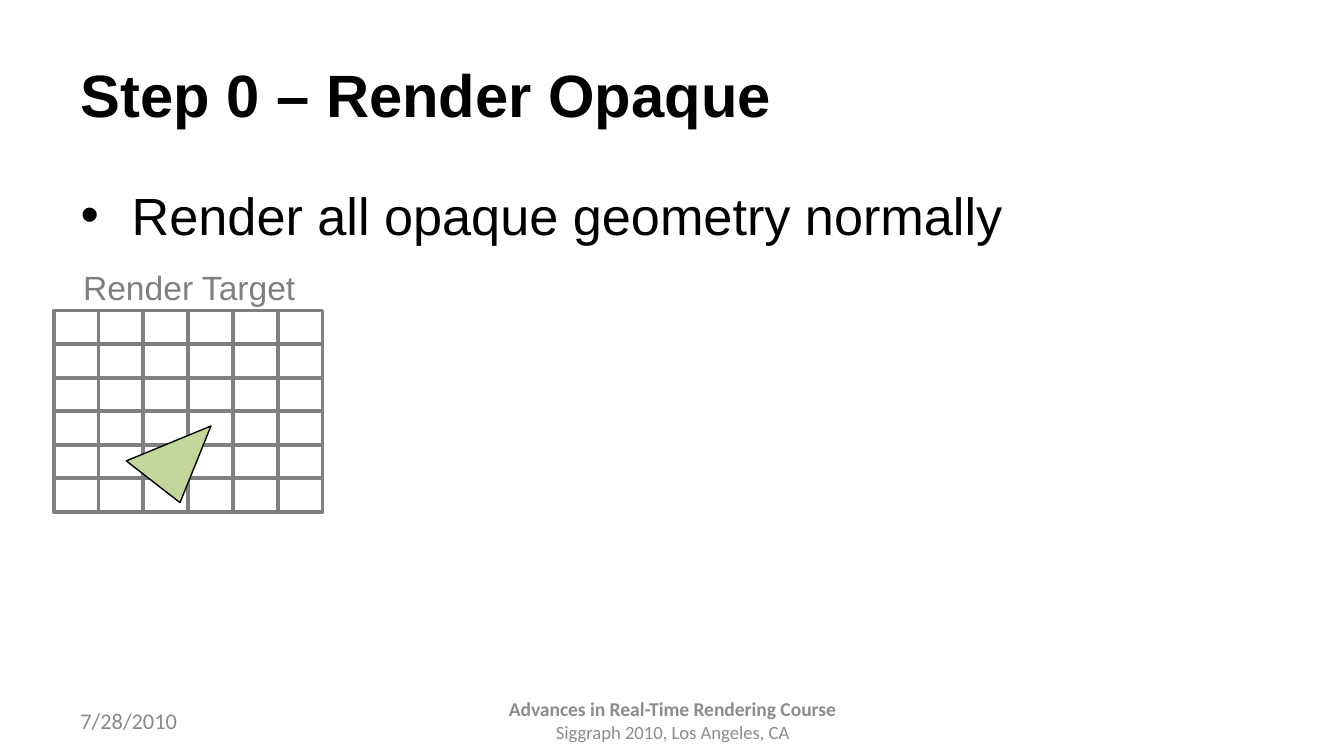
import pptx
import pptx.dml.color
import pptx.enum.shapes
import pptx.enum.text
import pptx.oxml
import pptx.oxml.ns
import pptx.util

Inches = pptx.util.Inches
Pt = pptx.util.Pt
ALIGN = pptx.enum.text.PP_ALIGN
ANCHOR = pptx.enum.text.MSO_ANCHOR

COLORS = {
    "text": "000000",
    "grid": "808080",
    "cell": "FFFFFF",
    "triangle": "C3D69B",
    "date": "898989",
    "footer": "8C8C8C",
}


class SlideBuilder:
    def __init__(self, slide):
        self.slide = slide

    def color(self, name):
        return pptx.dml.color.RGBColor.from_string(COLORS[name])

    def place(self, shape, left, top, width, height):
        shape.left, shape.top = Inches(left), Inches(top)
        shape.width, shape.height = Inches(width), Inches(height)

    def style_para(self, para, text, size, color, font="Arial", bold=False, align=ALIGN.LEFT):
        para.text = text
        para.alignment = align
        para.space_before = Pt(0)
        para.font.size = Pt(size)
        para.font.name = font
        para.font.bold = bold
        para.font.color.rgb = self.color(color)

    def title(self, text, *bounds):
        title = self.slide.shapes.title
        self.place(title, *bounds)
        title.text_frame.vertical_anchor = ANCHOR.MIDDLE
        self.style_para(title.text_frame.paragraphs[0], text, 32, "text", bold=True)

    def bullet(self, text, *bounds):
        body = self.slide.placeholders[1]
        self.place(body, *bounds)
        para = body.text_frame.paragraphs[0]
        props = para._p.get_or_add_pPr()
        props.set("marL", str(Inches(0.38)))
        props.set("indent", str(-Inches(0.38)))
        mark = pptx.oxml.parse_xml(f'<a:buChar {pptx.oxml.ns.nsdecls("a")} char="•"/>')
        props.append(mark)
        self.style_para(para, text, 28, "text")

    def text_box(self, bounds, lines, wrap=True, anchor=ANCHOR.MIDDLE):
        box = self.slide.shapes.add_textbox(*map(Inches, bounds))
        frame = box.text_frame
        frame.word_wrap = wrap
        frame.vertical_anchor = anchor
        for index, line in enumerate(lines):
            para = frame.add_paragraph() if index else frame.paragraphs[0]
            self.style_para(para, **line)

    def finish(self, shape, fill, line, weight):
        shape.shadow.inherit = False
        shape.fill.solid()
        shape.fill.fore_color.rgb = self.color(fill)
        shape.line.color.rgb = self.color(line)
        shape.line.width = Pt(weight)

    def grid(self, left, top, width, height, rows, columns):
        cell_width, cell_height = width / columns, height / rows
        for row in range(rows):
            for column in range(columns):
                cell = self.slide.shapes.add_shape(
                    pptx.enum.shapes.MSO_SHAPE.RECTANGLE,
                    Inches(left + column * cell_width), Inches(top + row * cell_height),
                    Inches(cell_width), Inches(cell_height))
                self.finish(cell, "cell", "grid", 2)

    def polygon(self, points, fill, line, weight):
        start, *rest = [(Inches(x), Inches(y)) for x, y in points]
        builder = self.slide.shapes.build_freeform(*start)
        builder.add_line_segments(rest, close=True)
        self.finish(builder.convert_to_shape(), fill, line, weight)


def main():
    deck = pptx.Presentation()
    deck.slide_width = Inches(10)
    deck.slide_height = deck.slide_width * 9 // 16
    page = SlideBuilder(deck.slides.add_slide(deck.slide_layouts[1]))

    page.title("Step 0 – Render Opaque", 0.5, 0.23, 9, 0.94)
    page.bullet("Render all opaque geometry normally", 0.5, 1.31, 9, 3.71)

    page.grid(0.4, 2.31, 2, 1.5, rows=6, columns=6)
    page.text_box((0.52, 1.94, 1.8, 0.4),
                  [dict(text="Render Target", size=18, color="grid")],
                  wrap=False, anchor=ANCHOR.TOP)
    page.polygon([(0.94, 3.43), (1.34, 3.74), (1.57, 3.17)], "triangle", "text", 0.75)

    page.text_box((0.5, 5.21, 2.33, 0.3),
                  [dict(text="7/28/2010", size=12, color="date", font="Calibri")])
    footer = dict(color="footer", font="Calibri", align=ALIGN.CENTER)
    page.text_box((3.42, 5.21, 3.17, 0.3), [
        dict(text="Advances in Real-Time Rendering Course", size=10.5, bold=True, **footer),
        dict(text="Siggraph 2010, Los Angeles, CA", size=10, **footer),
    ])
    deck.save("out.pptx")


if __name__ == "__main__":
    main()
